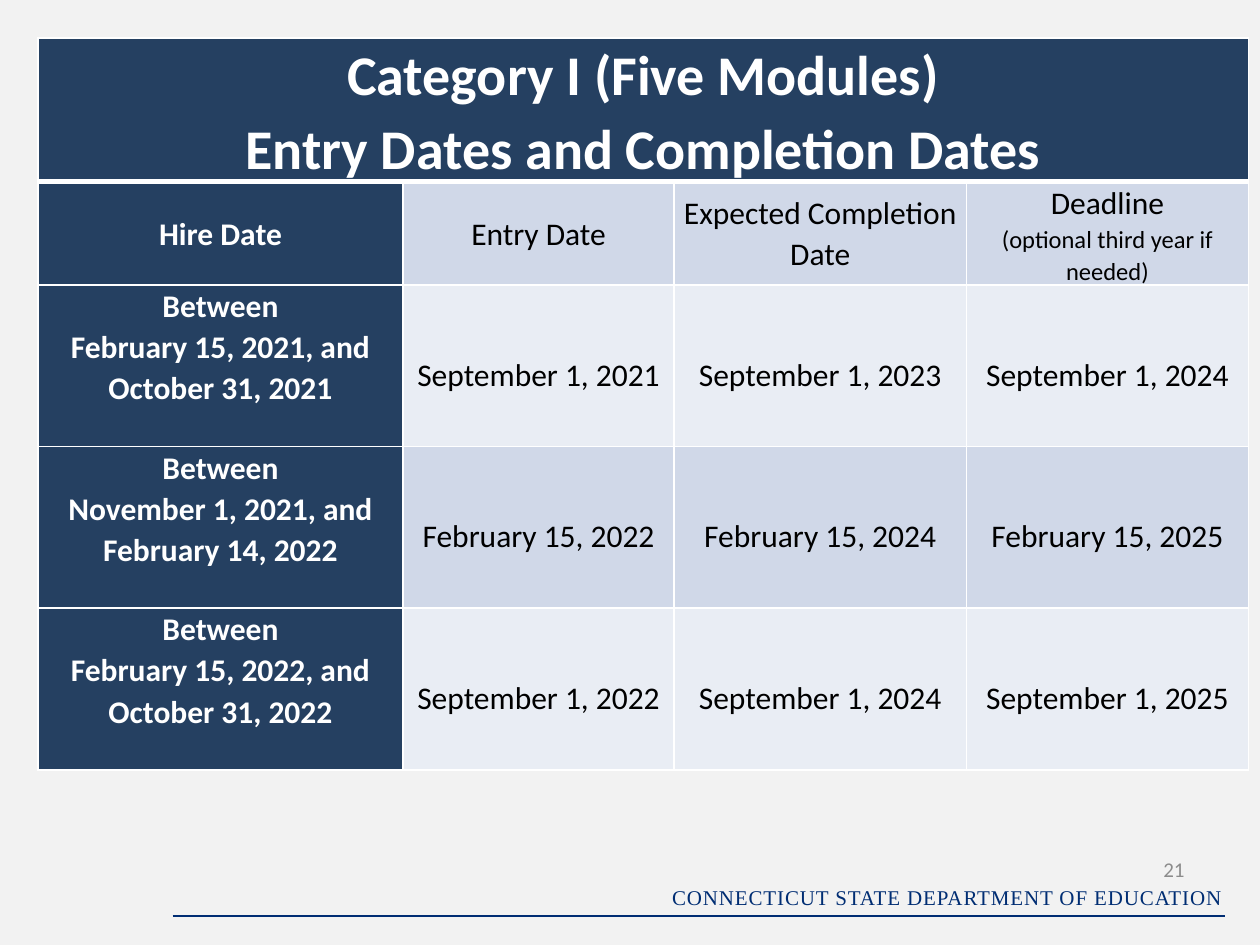
import pptx
import pptx.dml.color
import pptx.enum.shapes
import pptx.enum.text
import pptx.oxml
import pptx.oxml.ns
import pptx.util
from pptx.util import Inches

COLORS = {"page": "F2F2F2", "navy": "254061", "band": "D0D8E8", "light": "E9EDF4",
          "white": "FFFFFF", "black": "000000", "footer": "002D73", "number": "8C8C8C"}
ALIGN = pptx.enum.text.PP_ALIGN
ANCHOR = pptx.enum.text.MSO_ANCHOR


def color(name):
    return pptx.dml.color.RGBColor.from_string(COLORS[name])


def format_text(para, size, color_name, align, bold=False, font="Calibri"):
    para.alignment = align
    for span in para.runs:
        span.font.name = font
        span.font.size = pptx.util.Pt(size)
        span.font.bold = bold
        span.font.color.rgb = color(color_name)


deck = pptx.Presentation()
deck.slide_width, deck.slide_height = Inches(10), Inches(7.5)
page = deck.slides.add_slide(deck.slide_layouts[6])
page.background.fill.solid()
page.background.fill.fore_color.rgb = color("page")

# Footer rule
rule = page.shapes.add_connector(pptx.enum.shapes.MSO_CONNECTOR.STRAIGHT,
                                 Inches(1.37), Inches(7.27), Inches(9.72), Inches(7.27))
rule.line.color.rgb = color("footer")
rule.line.width = pptx.util.Pt(0.75)
pptx.oxml.ns.qn("a:effectLst")
rule._element.spPr.append(pptx.oxml.parse_xml(
    f'<a:effectLst {pptx.oxml.ns.nsdecls("a")}/>'))

# Footer text and page number
footer_items = [
    ("CONNECTICUT STATE DEPARTMENT OF EDUCATION", (5.18, 6.97, 4.62, 0.3),
     "footer", "Times New Roman", ANCHOR.TOP, "50"),
    ("21", (8.97, 6.7, 0.53, 0.4), "number", "Calibri", ANCHOR.MIDDLE, "0"),
]
for text, place, color_name, font, anchor, spacing in footer_items:
    box = page.shapes.add_textbox(*map(Inches, place))
    box.text_frame.word_wrap = True
    box.text_frame.vertical_anchor = anchor
    box.text_frame.text = text
    para = box.text_frame.paragraphs[0]
    format_text(para, 12, color_name, ALIGN.RIGHT, font=font)
    para.runs[0].font._element.set("spc", spacing)

# Table content
rows = [
    ["Category I (Five Modules)\nEntry Dates and Completion Dates", "", "", ""],
    ["Hire Date", "Entry Date", "Expected Completion Date",
     "Deadline\n(optional third year if needed)"],
    ["Between\nFebruary 15, 2021, and October 31, 2021",
     "September 1, 2021", "September 1, 2023", "September 1, 2024"],
    ["Between\nNovember 1, 2021, and February 14, 2022",
     "February 15, 2022", "February 15, 2024", "February 15, 2025"],
    ["Between\nFebruary 15, 2022, and October 31, 2022",
     "September 1, 2022", "September 1, 2024", "September 1, 2025"],
]
widths = [2.9, 2.15, 2.32, 2.24]
heights = [1.14, 0.82, 1.28, 1.28, 1.28]
table = page.shapes.add_table(len(rows), len(widths), Inches(0.3), Inches(0.3),
                              Inches(sum(widths)), Inches(sum(heights))).table
table.first_row = table.horz_banding = False
for column, width in zip(table.columns, widths):
    column.width = Inches(width)
for row, height in zip(table.rows, heights):
    row.height = Inches(height)
table.cell(0, 0).merge(table.cell(0, 3))

# Cell text, fills and borders
for r, texts in enumerate(rows):
    for c, text in enumerate(texts):
        cell = table.cell(r, c)
        is_title, is_heading = r == 0, r == 0 or c == 0
        is_hire_range = r > 1 and c == 0
        is_date = r > 1 and c > 0
        cell.margin_left = cell.margin_right = Inches(0.07)
        cell.margin_top = 0
        cell.margin_bottom = Inches(0.32 if is_hire_range else 0)
        cell.vertical_anchor = (ANCHOR.TOP if is_title else
                                ANCHOR.BOTTOM if is_hire_range else ANCHOR.MIDDLE)
        cell.fill.solid()
        cell.fill.fore_color.rgb = color(
            "navy" if is_heading else "band" if r % 2 else "light")
        if text:
            cell.text_frame.text = text
        for para in cell.text_frame.paragraphs:
            size = 32 if is_title else 14 if para.text.startswith("(") else 18
            format_text(para, size, "white" if is_heading else "black",
                        ALIGN.CENTER, bold=is_heading)
            para.line_spacing = 1.5 if is_date else 1.07
        properties = cell._tc.get_or_add_tcPr()
        for position, side in enumerate("LRTB"):
            thick = (r, side) in [(0, "B"), (1, "T")]
            properties.insert(position, pptx.oxml.parse_xml(
                f'<a:ln{side} {pptx.oxml.ns.nsdecls("a")} w="{pptx.util.Pt(3 if thick else 1)}">'
                f'<a:solidFill><a:srgbClr val="{COLORS["white"]}"/></a:solidFill></a:ln{side}>'))

deck.save("out.pptx")
